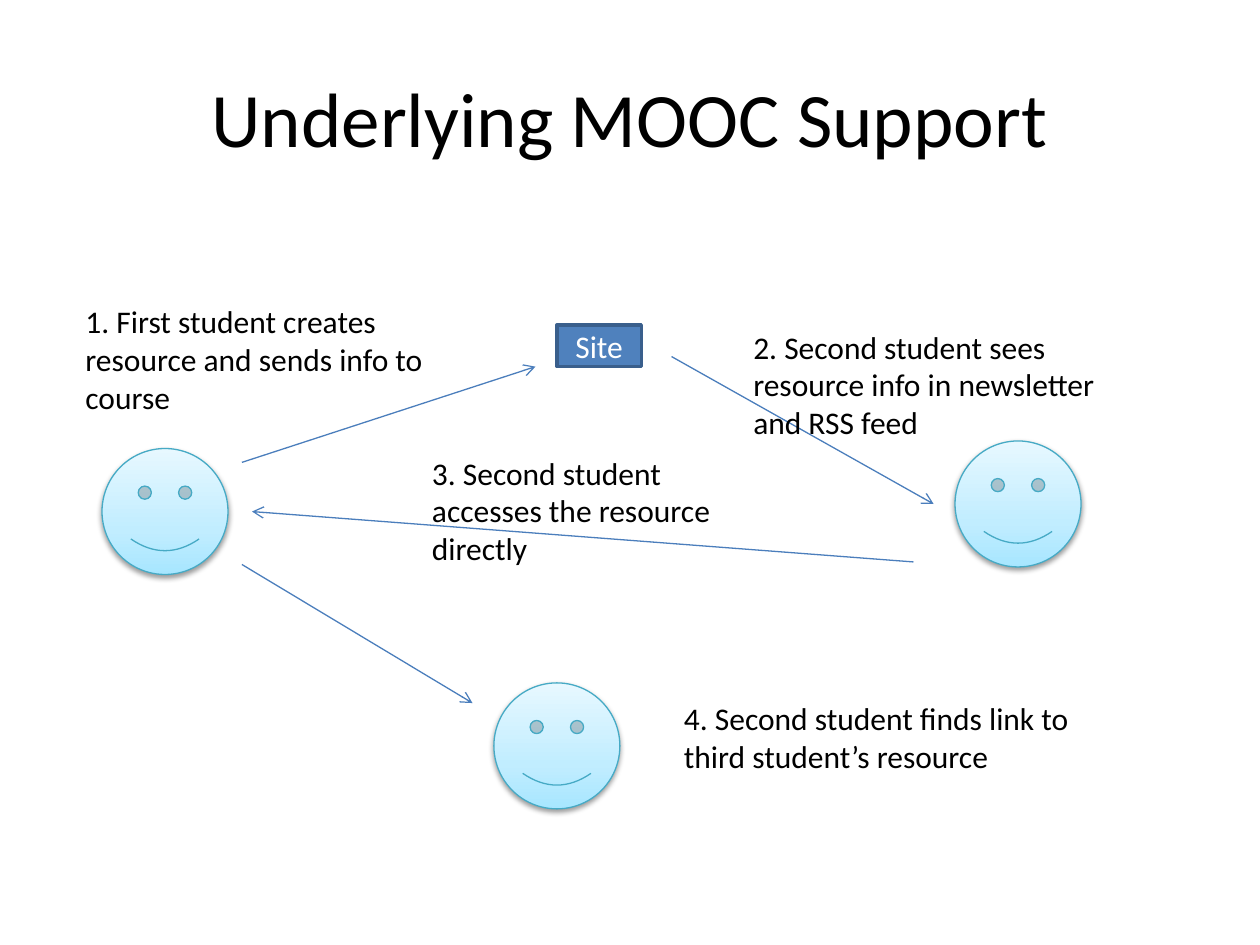
from copy import deepcopy

from pptx import Presentation
from pptx.dml.color import RGBColor
from pptx.enum import shapes, text
from pptx.oxml import parse_xml
from pptx.oxml.ns import nsdecls, qn
from pptx.util import Inches, Pt

THEME = {
    "font": "Calibri", "title_size": 44, "body_size": 18,
    "text": "000000", "site_text": "FFFFFF",
    "site_fill": "4F81BD", "site_line": "3A5F8C",
    "arrow": "4B7EBC", "face_line": "46AAC5",
    "face_stops": [(0, "A7E6FF"), (0.35, "C1EDFF"), (1, "E7F8FF")],
}

# Content: positions in inches
TITLE = "Underlying MOOC Support"
TITLE_BOX = (0.5, 0.3, 9, 1.25)
SITE = ("Site", (4.42, 2.58, 0.67, 0.33))
FACE_SIZE = 1
STUDENTS = [(0.81, 3.56), (7.58, 3.5), (3.92, 5.42)]
ARROWS = [  # start, end
    ((1.92, 3.67), (4.25, 2.91)),
    ((5.33, 2.83), (7.41, 4)),
    ((7.25, 4.46), (2, 4.06)),
    ((1.92, 4.48), (3.75, 5.58)),
]
STEPS = [
    ("1. First student creates resource and sends info to course", (0.58, 2.35, 3, 1.01)),
    ("2. Second student sees resource info in newsletter and RSS feed", (5.88, 2.55, 3.12, 1.01)),
    ("3. Second student accesses the resource directly", (3.33, 3.55, 2.43, 1.01)),
    ("4. Second student finds link to third student’s resource", (5.33, 5.5, 3.33, 0.71)),
]


def inches(values):
    return [Inches(value) for value in values]


def color(name):
    return RGBColor.from_string(THEME[name])


def set_text(shape, content, size="body_size", color_name="text", align=None):
    frame = shape.text_frame
    frame.text = content
    frame.word_wrap = True
    paragraph = frame.paragraphs[0]
    paragraph.alignment = align
    font = paragraph.runs[0].font
    font.name, font.size = THEME["font"], Pt(THEME[size])
    font.color.rgb = color(color_name)


def set_line(shape, color_name, width):
    shape.line.color.rgb = color(color_name)
    shape.line.width = Pt(width)


def add_student(slide, left, top):
    face = slide.shapes.add_shape(shapes.MSO_SHAPE.SMILEY_FACE,
                                  *inches((left, top, FACE_SIZE, FACE_SIZE)))
    set_line(face, "face_line", 0.75)
    # Three-stop gradient, running upwards
    face.fill.gradient()
    face.fill.gradient_angle = 90
    stop_list = face._element.spPr.find(".//" + qn("a:gsLst"))
    stop_list.append(deepcopy(stop_list[-1]))
    for stop, (position, rgb) in zip(face.fill.gradient_stops, THEME["face_stops"]):
        stop.position = position
        stop.color.rgb = RGBColor.from_string(rgb)
    # Soft shadow below
    face.shadow.inherit = False
    face._element.spPr.find(qn("a:effectLst")).append(parse_xml(
        f'<a:outerShdw {nsdecls("a")} blurRad="{Pt(3.1)}" dist="{Pt(1.6)}" '
        'dir="5400000" rotWithShape="0"><a:srgbClr val="000000">'
        '<a:alpha val="38000"/></a:srgbClr></a:outerShdw>'))


def add_arrow(slide, start, end):
    arrow = slide.shapes.add_connector(shapes.MSO_CONNECTOR.STRAIGHT, *inches(start + end))
    set_line(arrow, "arrow", 0.75)
    arrow.line._get_or_add_ln().append(
        parse_xml(f'<a:tailEnd {nsdecls("a")} type="arrow"/>'))
    arrow._element.spPr.append(parse_xml(f'<a:effectLst {nsdecls("a")}/>'))


def main():
    presentation = Presentation()
    presentation.slide_width, presentation.slide_height = Inches(10), Inches(7.5)
    slide = presentation.slides.add_slide(presentation.slide_layouts[5])

    # Title
    title = slide.shapes.title
    title.left, title.top, title.width, title.height = inches(TITLE_BOX)
    set_text(title, TITLE, size="title_size", align=text.PP_ALIGN.CENTER)
    title.text_frame.vertical_anchor = text.MSO_ANCHOR.MIDDLE

    # Students and course site
    for left, top in STUDENTS:
        add_student(slide, left, top)
    label, box = SITE
    site = slide.shapes.add_shape(shapes.MSO_SHAPE.RECTANGLE, *inches(box))
    site.shadow.inherit = False
    site.fill.solid()
    site.fill.fore_color.rgb = color("site_fill")
    set_line(site, "site_line", 2)
    set_text(site, label, color_name="site_text", align=text.PP_ALIGN.CENTER)
    site.text_frame.vertical_anchor = text.MSO_ANCHOR.MIDDLE

    # Flow between them
    for start, end in ARROWS:
        add_arrow(slide, start, end)

    # Step captions
    for caption, box in STEPS:
        step = slide.shapes.add_textbox(*inches(box))
        set_text(step, caption)
        step.text_frame.auto_size = text.MSO_AUTO_SIZE.SHAPE_TO_FIT_TEXT

    presentation.save("out.pptx")


if __name__ == "__main__":
    main()
